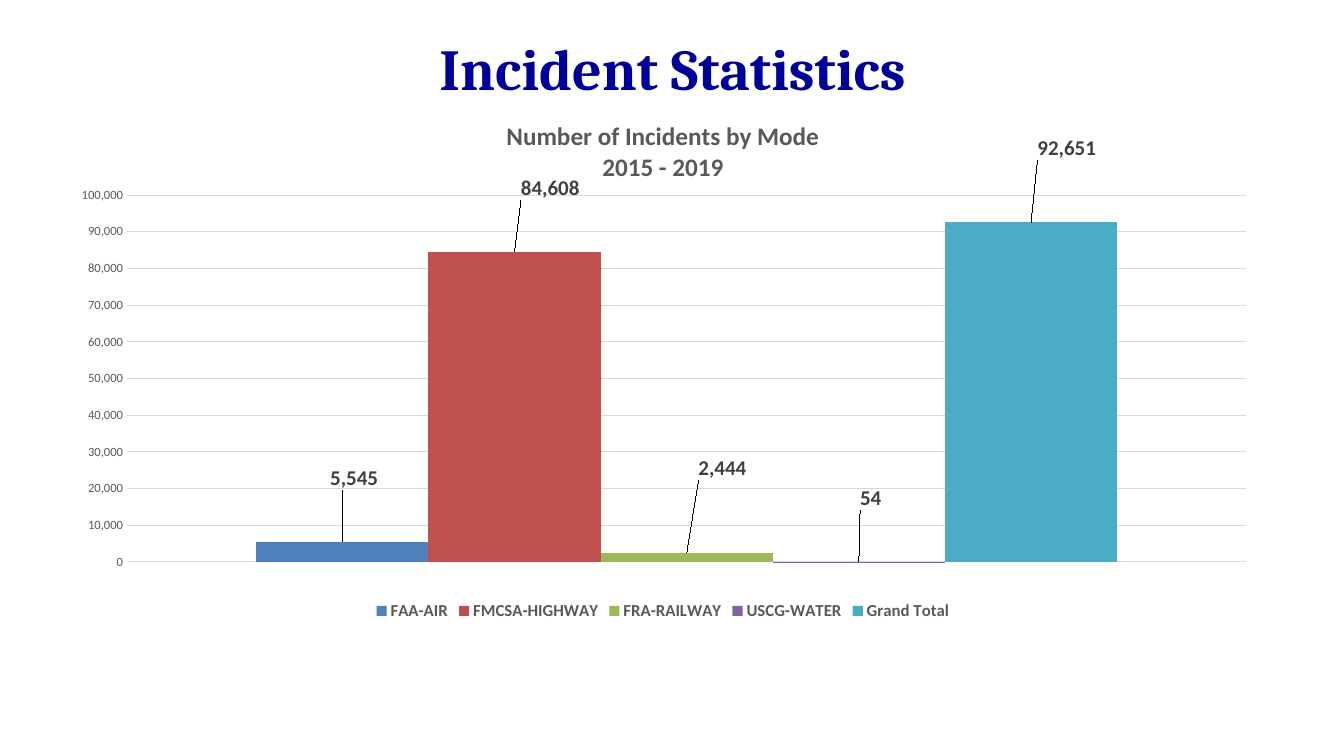
from dataclasses import dataclass

from lxml import etree
from pptx import Presentation
from pptx.chart.data import CategoryChartData
from pptx.dml.color import RGBColor
from pptx.enum.chart import XL_CHART_TYPE as ChartType, XL_LABEL_POSITION as LabelPos
from pptx.enum.chart import XL_LEGEND_POSITION as LegendPos, XL_TICK_MARK as Tick
from pptx.enum.text import MSO_ANCHOR as Anchor, PP_ALIGN as Align
from pptx.oxml.ns import qn
from pptx.util import Inches, Pt


@dataclass(frozen=True)
class Theme:
    heading: str = "Cambria"
    body: str = "Calibri"
    navy: str = "000099"
    gray: str = "595959"
    dark: str = "404040"
    grid: str = "D9D9D9"
    title_size: float = 41.4
    chart_title_size: float = 18
    label_size: float = 15
    legend_size: float = 12
    axis_size: float = 9


THEME = Theme()
NUMBER_FORMAT = "#,##0"
MODES = [
    ("FAA-AIR", 5545, "4F81BD", (0.01, -0.09)),
    ("FMCSA-HIGHWAY", 84608, "C0504D", (0.03, -0.09)),
    ("FRA-RAILWAY", 2444, "9BBB59", (0.03, -0.13)),
    ("USCG-WATER", 54, "8064A2", (0.01, -0.09)),
    ("Grand Total", 92651, "4BACC6", (0.03, -0.11)),
]


def set_attrs(obj, values):
    for name, value in values.items():
        setattr(obj, name, value)


def set_font(font, size, color, name=THEME.body, bold=True):
    set_attrs(font, {"size": Pt(size), "name": name, "bold": bold})
    font.color.rgb = RGBColor.from_string(color)


def make_layout(values):
    layout = etree.Element(qn("c:layout"))
    manual = etree.SubElement(layout, qn("c:manualLayout"))
    for tag, value in values.items():
        etree.SubElement(manual, qn(f"c:{tag}")).set("val", str(value))
    return layout


def add_title(slide, box, text):
    sp = slide.shapes.title
    set_attrs(sp, dict(zip(("left", "top", "width", "height"), map(Inches, box))))
    tf = sp.text_frame
    set_attrs(tf, {"vertical_anchor": Anchor.MIDDLE, "word_wrap": True,
                   "margin_bottom": Inches(0.57)})
    p = tf.paragraphs[0]
    p.alignment = Align.CENTER
    r = p.add_run()
    r.text = text
    set_font(r.font, THEME.title_size, THEME.navy, THEME.heading)


def style_chart_title(chart, lines):
    tf = chart.chart_title.text_frame
    tf.text = "\n".join(lines)
    for p in tf.paragraphs:
        set_font(p.runs[0].font, THEME.chart_title_size, THEME.gray)
    chart.chart_title.include_in_layout = False


def style_axes(chart):
    chart.category_axis.visible = False
    axis = chart.value_axis
    set_attrs(axis, {"minimum_scale": 0, "maximum_scale": 100000, "major_unit": 10000,
                     "major_tick_mark": Tick.NONE, "minor_tick_mark": Tick.NONE})
    set_attrs(axis.tick_labels, {"number_format": NUMBER_FORMAT,
                                 "number_format_is_linked": False})
    set_font(axis.tick_labels.font, THEME.axis_size, THEME.gray, bold=False)
    axis.format.line.fill.background()
    grid = axis.major_gridlines.format.line
    grid.width = Pt(0.75)
    grid.color.rgb = RGBColor.from_string(THEME.grid)


def style_series(series, color, offset):
    fill = series.format.fill
    fill.solid()
    fill.fore_color.rgb = RGBColor.from_string(color)
    label = series.points[0].data_label
    set_font(label.font, THEME.label_size, THEME.dark)
    label.position = LabelPos.OUTSIDE_END
    set_attrs(series.data_labels, {"show_value": True, "number_format": NUMBER_FORMAT,
                                   "number_format_is_linked": False})
    set_font(series.data_labels.font, THEME.label_size, THEME.dark)
    idx = series.data_labels._element.find(qn("c:dLbl")).find(qn("c:idx"))
    idx.addnext(make_layout(dict(zip("xy", offset))))


def add_incident_chart(slide, box):
    data = CategoryChartData(number_format=NUMBER_FORMAT)
    data.categories = ["1"]
    for name, value, _, _ in MODES:
        data.add_series(name, [value])
    chart = slide.shapes.add_chart(ChartType.COLUMN_CLUSTERED, *map(Inches, box), data).chart
    set_font(chart.font, 10, "000000", bold=False)
    style_chart_title(chart, ["Number of Incidents by Mode", "2015 - 2019"])
    style_axes(chart)

    plot = chart.plots[0]
    set_attrs(plot, {"gap_width": 150, "overlap": 0, "vary_by_categories": False})
    for series, (_, _, color, offset) in zip(plot.series, MODES):
        style_series(series, color, offset)

    chart.has_legend = True
    set_attrs(chart.legend, {"position": LegendPos.BOTTOM, "include_in_layout": False})
    set_font(chart.legend.font, THEME.legend_size, THEME.gray)

    area = chart._chartSpace.find(".//" + qn("c:plotArea"))
    for old in area.findall(qn("c:layout")):
        area.remove(old)
    area.insert(0, make_layout({"layoutTarget": "inner", "xMode": "edge", "yMode": "edge",
                                "x": 0.05, "y": 0.18, "w": 0.94, "h": 0.7}))


def main():
    prs = Presentation()
    set_attrs(prs, {"slide_width": Inches(13.33), "slide_height": Inches(7.5)})
    slide = prs.slides.add_slide(prs.slide_layouts[5])
    add_title(slide, (0.67, 0.3, 12, 1.25), "Incident Statistics")
    add_incident_chart(slide, (0.67, 1, 11.81, 5.2))
    prs.save("out.pptx")


if __name__ == "__main__":
    main()
